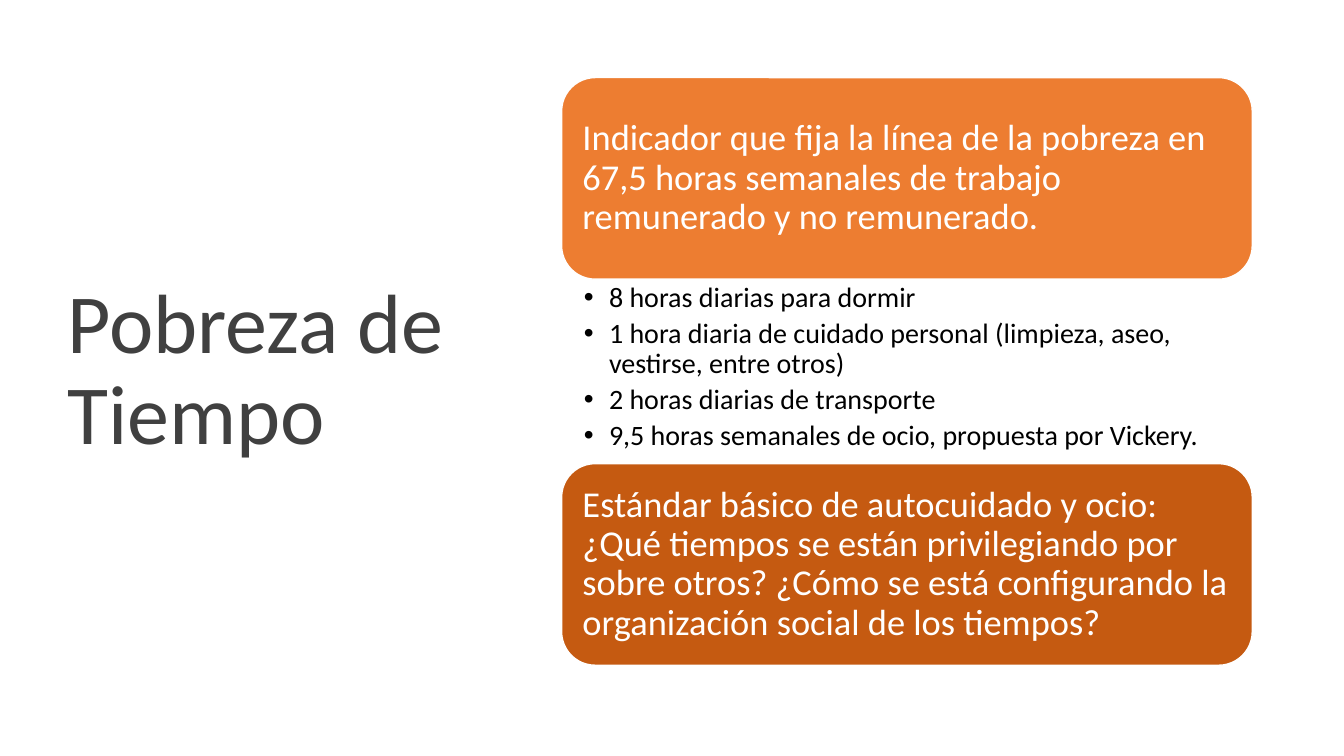
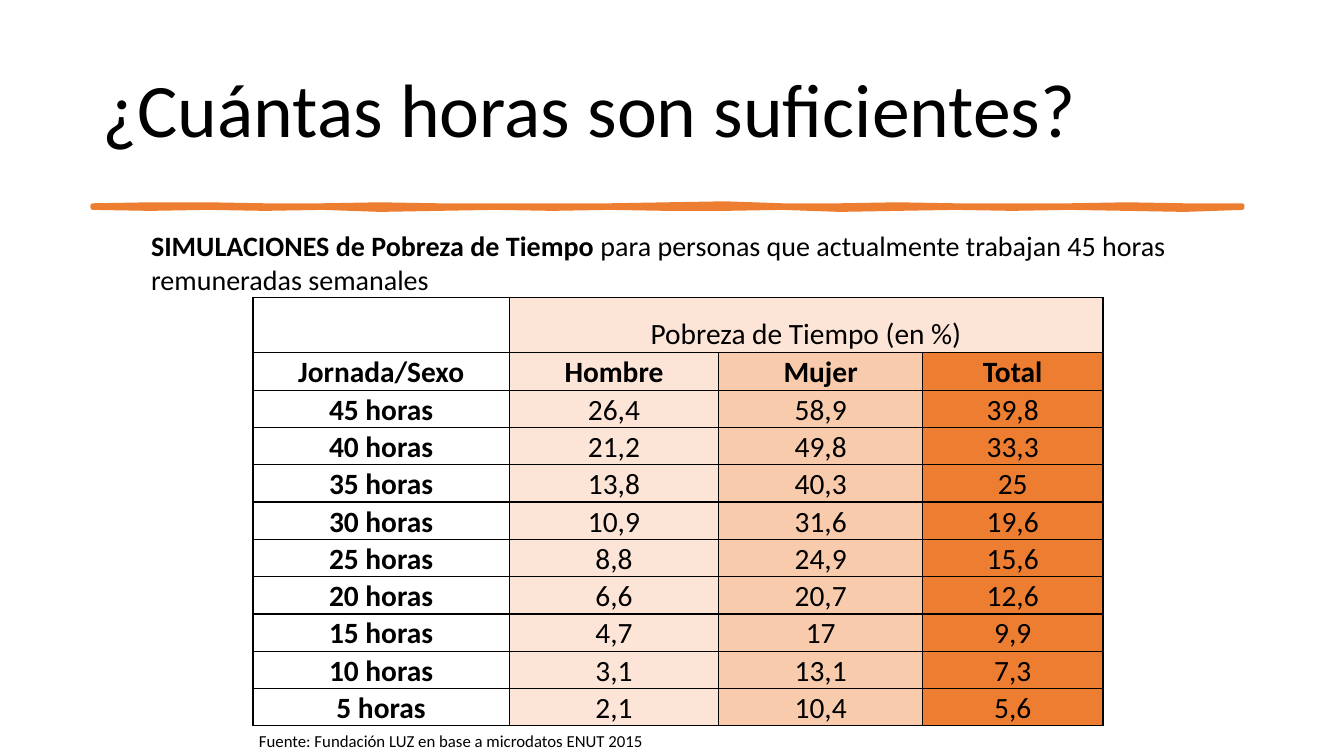
from dataclasses import dataclass
from lxml import etree
from pptx import Presentation
from pptx.dml.color import RGBColor
from pptx.enum.shapes import MSO_SHAPE
from pptx.enum.text import MSO_ANCHOR, PP_ALIGN
from pptx.oxml.ns import qn
from pptx.util import Inches, Pt

ROUND = MSO_SHAPE.ROUNDED_RECTANGLE
TOP, MID, LOW = MSO_ANCHOR.TOP, MSO_ANCHOR.MIDDLE, MSO_ANCHOR.BOTTOM
LEFT, CENTER = PP_ALIGN.LEFT, PP_ALIGN.CENTER


@dataclass(frozen=True)
class Theme:
    font: str = "Calibri"
    ink: str = "000000"
    gray: str = "404040"
    white: str = "FFFFFF"
    main: str = "ED7D31"
    dark: str = "C55A11"
    pale: str = "FCE4D6"
    soft: str = "F8CBAD"
    hero: int = 60
    title: int = 54
    card: int = 26
    grid: int = 21
    body: int = 20
    note: int = 12


T = Theme()
WIDE, HIGH = 13.33, 7.5
PAD = (0.1, 0.05, 0.1, 0.05)

HERO = "Pobreza de Tiempo"
CARDS = [
    ("Indicador que fija la línea de la pobreza en 67,5 horas semanales de trabajo "
     "remunerado y no remunerado.", T.main),
    ("Estándar básico de autocuidado y ocio: ¿Qué tiempos se están privilegiando por "
     "sobre otros? ¿Cómo se está configurando la organización social de los tiempos?",
     T.dark),
]
ITEMS = [
    "8 horas diarias para dormir",
    "1 hora diaria de cuidado personal (limpieza, aseo, vestirse, entre otros)",
    "2 horas diarias de transporte",
    "9,5 horas semanales de ocio, propuesta por Vickery.",
]

TITLE = "¿Cuántas horas son suficientes?"
LEAD = ("SIMULACIONES de Pobreza de Tiempo ",
        "para personas que actualmente trabajan 45 horas remuneradas semanales")
SOURCE = "Fuente: Fundación LUZ en base a microdatos ENUT 2015"
SPAN = "Pobreza de Tiempo (en %)"
HEAD = ["Jornada/Sexo", "Hombre", "Mujer", "Total"]
RATES = [
    (45, "26,4", "58,9", "39,8"),
    (40, "21,2", "49,8", "33,3"),
    (35, "13,8", "40,3", "25"),
    (30, "10,9", "31,6", "19,6"),
    (25, "8,8", "24,9", "15,6"),
    (20, "6,6", "20,7", "12,6"),
    (15, "4,7", "17", "9,9"),
    (10, "3,1", "13,1", "7,3"),
    (5, "2,1", "10,4", "5,6"),
]
FILLS = [None, T.pale, T.soft, T.main]
COLS = [2.54, 2.08, 2.02, 1.79]
ROWS = [0.55] + [0.35] * (len(RATES) + 1)
CREST = [0, -1, -1, 0, 0, -1, 0, 0, 0, 0, -1, -2, 0, 0, -1, 0, 0, 0, -1, 0, 0]
BASE = [2, 3, 2, 3, 2, 4, 3, 2, 3, 2, 3, 3, 2, 4, 3, 2, 3, 2, 3, 4, 2]


def style(run, size, color, bold=False):
    font = run.font
    font.name, font.size, font.bold = T.font, Pt(size), bold
    font.color.rgb = RGBColor.from_string(color)


def dress(frame, size, color, pad=PAD, anchor=TOP, line=None, align=LEFT):
    frame.word_wrap = True
    frame.vertical_anchor = anchor
    (frame.margin_left, frame.margin_top,
     frame.margin_right, frame.margin_bottom) = map(Inches, pad)
    for para in frame.paragraphs:
        para.alignment = align
        para.line_spacing = line
        for run in para.runs:
            style(run, size, color)


def write(slide, box, text, size, color=T.ink, **opts):
    frame = slide.shapes.add_textbox(*map(Inches, box)).text_frame
    frame.text = text
    dress(frame, size, color, **opts)
    return frame


def title(slide, box, text, size, color):
    write(slide, box, text, size, color, anchor=MID, line=0.9)


def paint(shape, fill, line, width):
    shape.shadow.inherit = False
    shape.fill.solid()
    shape.fill.fore_color.rgb = RGBColor.from_string(fill)
    shape.line.color.rgb = RGBColor.from_string(line)
    shape.line.width = Pt(width)


def bullet(para):
    props = para._p.get_or_add_pPr()
    props.set("marL", str(Inches(0.25)))
    props.set("indent", str(-Inches(0.25)))
    para.space_after = Pt(T.body * 0.2)
    etree.SubElement(props, qn("a:buFont")).set("typeface", "Arial")
    etree.SubElement(props, qn("a:buChar")).set("char", "•")


def cards(slide):
    left, top, wide, tall, gap = 5.57, 0.77, 6.85, 2, 1.83
    for row, (text, fill) in enumerate(CARDS):
        box = left, top + row * (tall + gap), wide, tall
        shape = slide.shapes.add_shape(ROUND, *map(Inches, box))
        paint(shape, fill, T.white, 1)
        shape.text_frame.text = text
        dress(shape.text_frame, T.card, T.white, pad=(0.11,) * 4, anchor=MID, line=0.9)
    frame = write(slide, (left, top + tall, wide, gap), "\n".join(ITEMS), T.body,
                  pad=(0.22, 0.04, 0.2, 0.04), line=0.9)
    for para in frame.paragraphs:
        bullet(para)


def brush(slide):
    left, top, wide = 0.92, 2.04, 11.4
    step = wide / (len(CREST) - 1)
    edges = [[(Inches(left + i * step), Inches(top + y / 100))
              for i, y in enumerate(edge)] for edge in (CREST, BASE)]
    dots = edges[0] + edges[1][::-1]
    pen = slide.shapes.build_freeform(*dots[0], scale=1.0)
    pen.add_line_segments(dots[1:], close=True)
    shape = pen.convert_to_shape()
    paint(shape, T.main, T.main, 3.25)
    etree.SubElement(shape.line._get_or_add_ln(), qn("a:round"))


def frame_cell(cell, fill):
    if fill:
        cell.fill.solid()
        cell.fill.fore_color.rgb = RGBColor.from_string(fill)
    else:
        cell.fill.background()
    props = cell._tc.get_or_add_tcPr()
    for spot, side in enumerate("LRTB"):
        line = etree.Element(qn("a:ln" + side), w=str(Pt(1)))
        tint = etree.SubElement(line, qn("a:solidFill"))
        etree.SubElement(tint, qn("a:srgbClr")).set("val", T.ink)
        props.insert(spot, line)


def grid(slide):
    data = [["", SPAN, "", ""], HEAD]
    data += [[f"{hours} horas", *vals] for hours, *vals in RATES]
    box = 2.51, 2.95, sum(COLS), sum(ROWS)
    table = slide.shapes.add_table(len(ROWS), len(COLS), *map(Inches, box)).table
    table.first_row = table.horz_banding = False
    for col, wide in zip(table.columns, COLS):
        col.width = Inches(wide)
    for row, tall in zip(table.rows, ROWS):
        row.height = Inches(tall)
    table.cell(0, 1).merge(table.cell(0, 3))
    for r, vals in enumerate(data):
        for c, text in enumerate(vals):
            cell = table.cell(r, c)
            frame_cell(cell, T.pale if r == 0 and c else FILLS[c])
            cell.vertical_anchor = LOW
            cell.margin_left = cell.margin_right = cell.margin_top = Inches(0.02)
            cell.margin_bottom = 0
            para = cell.text_frame.paragraphs[0]
            para.text = text
            para.alignment = CENTER
            for run in para.runs:
                style(run, T.grid, T.ink, bold=r == 1 or c == 0)


def lead(slide):
    head, tail = LEAD
    para = write(slide, (1.4, 2.22, 10.53, 0.77), head, T.body).paragraphs[0]
    para.runs[0].font.bold = True
    run = para.add_run()
    run.text = tail
    style(run, T.body, T.ink)


def main():
    deck = Presentation()
    deck.slide_width, deck.slide_height = Inches(WIDE), Inches(HIGH)
    blank = deck.slide_layouts[6]

    slide = deck.slides.add_slide(blank)
    title(slide, (0.57, 0.68, 4.16, 6.02), HERO, T.hero, T.gray)
    cards(slide)

    slide = deck.slides.add_slide(blank)
    title(slide, (0.92, 0.4, 11.5, 1.45), TITLE, T.title, T.ink)
    brush(slide)
    grid(slide)
    write(slide, (2.47, 7.2, 4.04, 0.3), SOURCE, T.note)
    lead(slide)

    deck.save("out.pptx")


if __name__ == "__main__":
    main()
